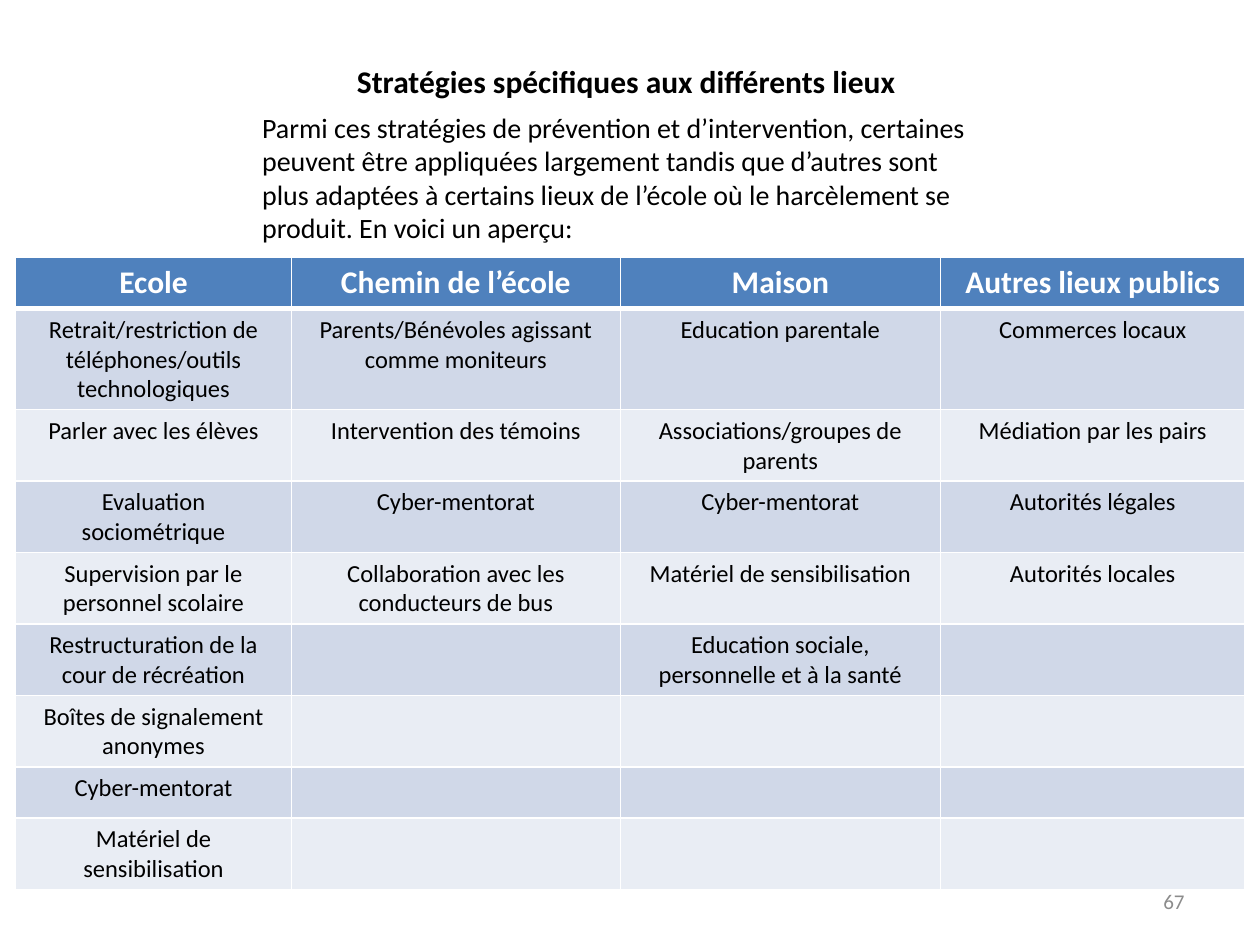
"""Build a slide on anti-bullying strategies by place, with a table of four places."""
from dataclasses import dataclass

from lxml.etree import SubElement
from pptx import Presentation
from pptx.dml.color import RGBColor
from pptx.enum.text import MSO_ANCHOR, MSO_AUTO_SIZE, PP_ALIGN
from pptx.oxml.ns import qn
from pptx.util import Pt


@dataclass(frozen=True)
class Theme:
    font: str = "Calibri"
    text: str = "000000"
    white: str = "FFFFFF"
    number: str = "8C8C8C"
    header: str = "4F81BD"
    bands: tuple = ("E9EDF4", "D0D8E8")
    heading_size: int = 18
    intro_size: int = 16
    cell_size: int = 14
    number_size: int = 12


theme = Theme()


def style(para, size, color, bold=False, align=PP_ALIGN.CENTER):
    para.alignment = align
    for span in para.runs:
        span.font.name = theme.font
        span.font.size = Pt(size)
        span.font.bold = bold
        span.font.color.rgb = RGBColor.from_string(color)


def add_borders(cell, widths):
    properties = cell._tc.get_or_add_tcPr()
    for side, width in widths.items():
        line = SubElement(properties, qn(f"a:ln{side}"), w=str(Pt(width)))
        fill = SubElement(line, qn("a:solidFill"))
        SubElement(fill, qn("a:srgbClr"), val=theme.white)


headers = ["Ecole", "Chemin de l’école", "Maison", "Autres lieux publics"]
strategies = [
    ["Retrait/restriction de téléphones/outils technologiques",
     "Parents/Bénévoles agissant comme moniteurs", "Education parentale", "Commerces locaux"],
    ["Parler avec les élèves", "Intervention des témoins",
     "Associations/groupes de parents", "Médiation par les pairs"],
    ["Evaluation sociométrique", "Cyber-mentorat", "Cyber-mentorat", "Autorités légales"],
    ["Supervision par le personnel scolaire", "Collaboration avec les conducteurs de bus",
     "Matériel de sensibilisation", "Autorités locales"],
    ["Restructuration de la cour de récréation", "",
     "Education sociale, personnelle et à la santé", ""],
    ["Boîtes de signalement anonymes", "", "", ""],
    ["Cyber-mentorat", "", "", ""],
    ["Matériel de sensibilisation", "", "", ""],
]
column_widths = [157.7, 187.9, 182.9, 174.2]
row_height = 29.2

deck = Presentation()
deck.slide_width, deck.slide_height = Pt(720), Pt(540)
page = deck.slides.add_slide(deck.slide_layouts[5])

title = page.shapes.title
title.left, title.top, title.width, title.height = Pt(142.6), Pt(31.7), Pt(430.6), Pt(113)
frame = title.text_frame
frame.word_wrap = True
frame.auto_size = MSO_AUTO_SIZE.SHAPE_TO_FIT_TEXT
frame.vertical_anchor = MSO_ANCHOR.TOP
heading = frame.paragraphs[0]
heading.text = "Stratégies spécifiques aux différents lieux"
intro = frame.add_paragraph()
intro.text = (
    "Parmi ces stratégies de prévention et d’intervention, certaines peuvent être "
    "appliquées largement tandis que d’autres sont plus adaptées à certains lieux "
    "de l’école où le harcèlement se produit. En voici un aperçu:"
)
style(heading, theme.heading_size, theme.text, bold=True)
style(intro, theme.intro_size, theme.text, align=PP_ALIGN.LEFT)
for para in frame.paragraphs:
    para.space_after = Pt(6)

rows = [headers] + strategies
table = page.shapes.add_table(
    len(rows), len(headers), Pt(8.9), Pt(147.2),
    Pt(sum(column_widths)), Pt(row_height * len(rows)),
).table
for column, width in zip(table.columns, column_widths):
    column.width = Pt(width)
for row_index, row in enumerate(rows):
    is_header = row_index == 0
    band = theme.header if is_header else theme.bands[row_index % 2]
    borders = {"L": 1, "R": 1, "T": 3 if row_index == 1 else 1, "B": 3 if is_header else 1}
    for column_index, text in enumerate(row):
        cell = table.cell(row_index, column_index)
        add_borders(cell, borders)
        cell.fill.solid()
        cell.fill.fore_color.rgb = RGBColor.from_string(band)
        if text:
            para = cell.text_frame.paragraphs[0]
            para.text = text
            size = theme.heading_size if is_header else theme.cell_size
            style(para, size, theme.white if is_header else theme.text, bold=is_header)

number = page.shapes.add_textbox(Pt(516), Pt(500.5), Pt(168), Pt(28.75))
number.text_frame.word_wrap = True
number.text_frame.vertical_anchor = MSO_ANCHOR.MIDDLE
number.text_frame.text = "67"
style(number.text_frame.paragraphs[0], theme.number_size, theme.number, align=PP_ALIGN.RIGHT)

deck.save("out.pptx")
